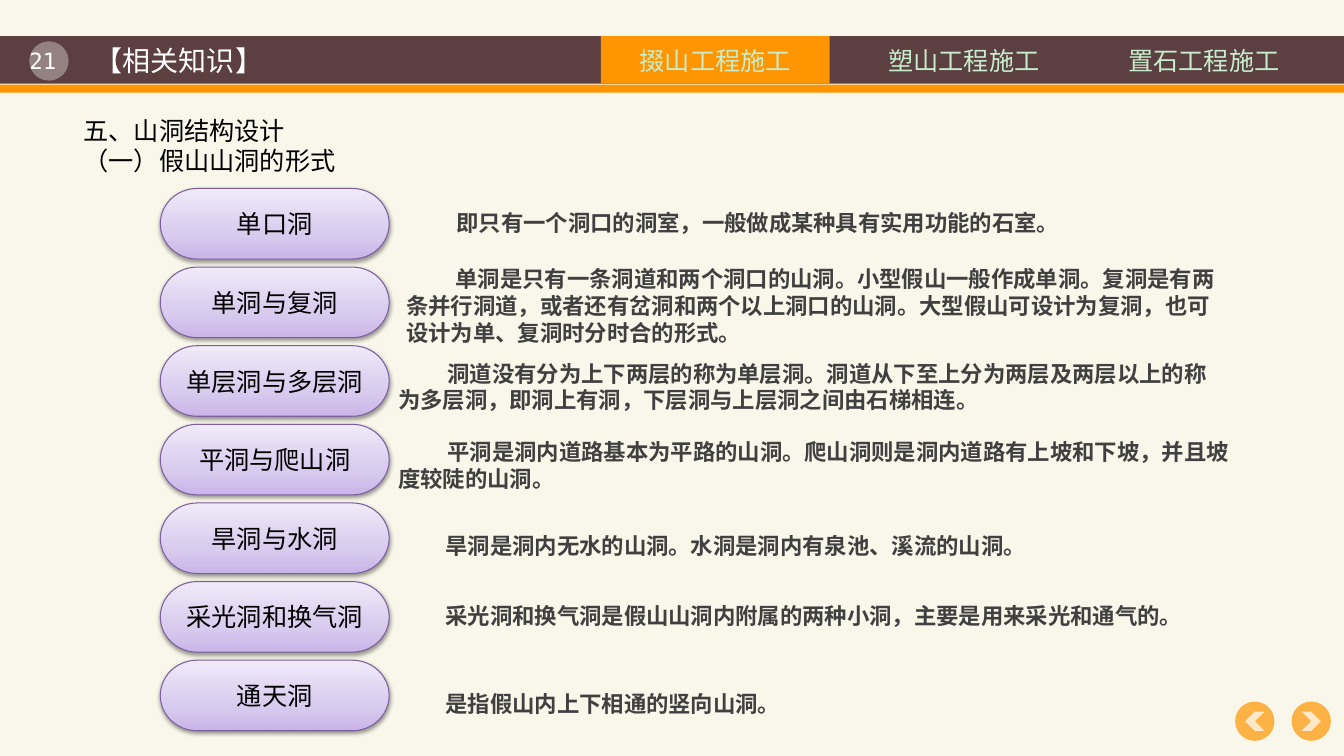
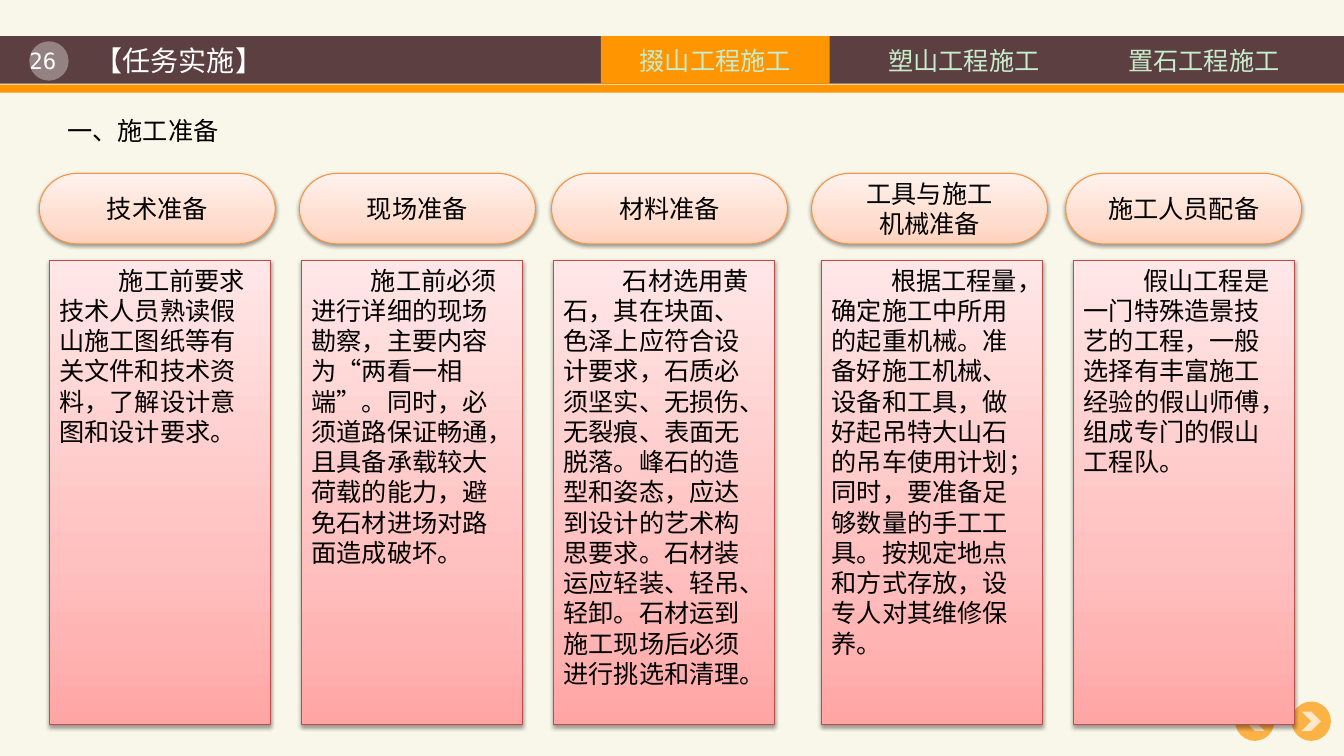
from lxml import etree
from pptx import Presentation
from pptx.dml.color import RGBColor
from pptx.enum.dml import MSO_THEME_COLOR
from pptx.enum.shapes import MSO_SHAPE
from pptx.enum.text import MSO_ANCHOR, MSO_AUTO_SIZE, PP_ALIGN
from pptx.oxml.ns import qn
from pptx.util import Inches, Pt

RECTANGLE, OVAL, CHEVRON = MSO_SHAPE.RECTANGLE, MSO_SHAPE.OVAL, MSO_SHAPE.CHEVRON
TERMINATOR = MSO_SHAPE.FLOWCHART_TERMINATOR
TOP, MIDDLE = MSO_ANCHOR.TOP, MSO_ANCHOR.MIDDLE
LEFT, CENTER = PP_ALIGN.LEFT, PP_ALIGN.CENTER
NO_AUTOFIT = MSO_AUTO_SIZE.NONE
ACCENT = MSO_THEME_COLOR.ACCENT_1

COLORS = {
    "paper": "F9F7EA", "band": "5C3F41", "orange": "FF9500", "white": "FFFFFF",
    "nav": "C7EDCC", "black": "000000", "gray": "404040",
    "purple_line": "7D60A0", "peach_line": "F69240", "red_line": "BF4C48",
}
GRADIENTS = {
    "purple": ("C9B5E8", "D8CBEE", "F0EAF9"),
    "peach": ("FFD2BD", "FFDED0", "FFF2ED"),
    "red": ("FFA6A5", "FFC0BF", "FFE7E7"),
}
GRADIENT_STOPS = (0, 35000, 100000)
SANS, SERIF, MONO = "Noto Sans CJK SC", "Times New Roman", "DejaVu Sans Mono"

NAV_TABS = [("掇山工程施工", 5.96, 2.27, True),
            ("塑山工程施工", 8.39, 2.34, False),
            ("置石工程施工", 10.73, 2.42, False)]

CAVES = [
    ("单口洞", (4.43, 2.03, 7.86, 0.37), 0,
     "即只有一个洞口的洞室，一般做成某种具有实用功能的石室。"),
    ("单洞与复洞", (3.93, 2.58, 8.28, 0.91), 0.49,
     "单洞是只有一条洞道和两个洞口的山洞。小型假山一般作成单洞。复洞是有两条并行洞道，"
     "或者还有岔洞和两个以上洞口的山洞。大型假山可设计为复洞，也可设计为单、复洞时分时合的形式。"),
    ("单层洞与多层洞", (3.85, 3.52, 8.44, 0.64), 0.49,
     "洞道没有分为上下两层的称为单层洞。洞道从下至上分为两层及两层以上的称为多层洞，"
     "即洞上有洞，下层洞与上层洞之间由石梯相连。"),
    ("平洞与爬山洞", (3.85, 4.3, 8.59, 0.64), 0.49,
     "平洞是洞内道路基本为平路的山洞。爬山洞则是洞内道路有上坡和下坡，并且坡度较陡的山洞。"),
    ("旱洞与水洞", (4.32, 5.23, 6.04, 0.37), 0,
     "旱洞是洞内无水的山洞。水洞是洞内有泉池、溪流的山洞。"),
    ("采光洞和换气洞", (3.83, 5.92, 8.46, 0.37), 0.49,
     "采光洞和换气洞是假山山洞内附属的两种小洞，主要是用来采光和通气的。"),
    ("通天洞", (4.32, 6.8, 6.67, 0.37), 0, "是指假山内上下相通的竖向山洞。"),
]

PREPARATIONS = [
    ("技术准备", 0.39, 0.49,
     "施工前要求技术人员熟读假山施工图纸等有关文件和技术资料，了解设计意图和设计要求。"),
    ("现场准备", 2.97, 2.99,
     "施工前必须进行详细的现场勘察，主要内容为“两看一相端”。同时，必须道路保证畅通，"
     "且具备承载较大荷载的能力，避免石材进场对路面造成破坏。"),
    ("材料准备", 5.47, 5.49,
     "石材选用黄石，其在块面、色泽上应符合设计要求，石质必须坚实、无损伤、无裂痕、表面无脱落。"
     "峰石的造型和姿态，应达到设计的艺术构思要求。石材装运应轻装、轻吊、轻卸。"
     "石材运到施工现场后必须进行挑选和清理。"),
    ("工具与施工\v机械准备", 8.05, 8.15,
     "根据工程量，确定施工中所用的起重机械。准备好施工机械、设备和工具，"
     "做好起吊特大山石的吊车使用计划；同时，要准备足够数量的手工工具。"
     "按规定地点和方式存放，设专人对其维修保养。"),
    ("施工人员配备", 10.57, 10.65,
     "假山工程是一门特殊造景技艺的工程，一般选择有丰富施工经验的假山师傅，组成专门的假山工程队。"),
]


def rgb(name):
    return RGBColor.from_string(COLORS[name])


def inches(box):
    return [Inches(value) for value in box]


def write(shape, lines, size, font, color, align=LEFT, anchor=TOP, bold=False, indent=0):
    frame = shape.text_frame
    frame.word_wrap = True
    frame.auto_size = NO_AUTOFIT
    frame.vertical_anchor = anchor
    frame.text = lines
    for paragraph in frame.paragraphs:
        paragraph.alignment = align
        if indent:
            properties = paragraph._p.get_or_add_pPr()
            properties.set("marL", "0")
            properties.set("indent", str(Inches(indent)))
        paragraph.font.size = Pt(size)
        paragraph.font.bold = bold
        paragraph.font.name = font
        paragraph.font.color.rgb = rgb(color)


def add_label(slide, box, lines, size, font, color, **layout):
    label = slide.shapes.add_textbox(*inches(box))
    write(label, lines, size, font, color, **layout)
    return label


def add_plain(slide, kind, box, color, opacity=100):
    plain = slide.shapes.add_shape(kind, *inches(box))
    plain.shadow.inherit = False
    plain.line.fill.background()
    plain.fill.solid()
    plain.fill.fore_color.rgb = rgb(color)
    if opacity < 100:
        solid = plain.fill._xPr.find(qn("a:solidFill"))
        etree.SubElement(solid[0], qn("a:alpha"), val=str(opacity * 1000))
    return plain


def add_soft_shadow(shape):
    shape.shadow.inherit = False
    effects = shape._element.spPr.find(qn("a:effectLst"))
    outer = etree.SubElement(effects, qn("a:outerShdw"), blurRad=str(Pt(3.1)),
                             dist=str(Pt(1.6)), dir="5400000", rotWithShape="0")
    black = etree.SubElement(outer, qn("a:srgbClr"), val=COLORS["black"])
    etree.SubElement(black, qn("a:alpha"), val="38000")


def add_panel(slide, kind, box, tone, lines, **layout):
    panel = slide.shapes.add_shape(kind, *inches(box))
    panel.fill.gradient()
    panel.fill.gradient_angle = 90
    stops = panel._element.spPr.find(".//" + qn("a:gsLst"))
    for stop in list(stops):
        stops.remove(stop)
    for position, color in zip(GRADIENT_STOPS, GRADIENTS[tone]):
        stop = etree.SubElement(stops, qn("a:gs"), pos=str(position))
        etree.SubElement(stop, qn("a:srgbClr"), val=color)
    panel.line.color.rgb = rgb(tone + "_line")
    panel.line.width = Pt(0.75)
    add_soft_shadow(panel)
    write(panel, lines, 18, SERIF, "black", **layout)


def add_arrow_button(slide, left, rotation):
    disc = add_plain(slide, OVAL, (left, 6.96, 0.39, 0.39), "orange", 70)
    chevron = add_plain(slide, CHEVRON, (left + 0.1, 7.06, 0.19, 0.19), "white", 70)
    chevron.rotation = rotation
    return slide.shapes.add_group_shape([disc, chevron])


def build_frame(slide, layout):
    parts = [
        add_arrow_button(slide, 12.25, 180),
        add_arrow_button(slide, 12.81, 0),
        add_plain(slide, RECTANGLE, (0, 0.36, 13.33, 0.47), "band"),
        add_plain(slide, RECTANGLE, (0, 0.84, 13.33, 0.08), "orange"),
        add_plain(slide, OVAL, (0.29, 0.41, 0.39, 0.39), "white", 35),
    ]
    for name, left, width, active in NAV_TABS:
        box = (left, 0.36, width, 0.47)
        if active:
            tab = add_plain(slide, RECTANGLE, box, "orange")
            write(tab, name, 18, SANS, "nav", align=CENTER, anchor=MIDDLE)
        else:
            tab = add_label(slide, box, name, 18, SANS, "nav", align=CENTER, anchor=MIDDLE)
        parts.append(tab)
    for part in parts:
        layout.shapes.element.append(part._element)


def add_page(deck, layout, number, title, heading, heading_box):
    slide = deck.slides.add_slide(layout)
    heading_title = slide.shapes.title
    heading_title.left, heading_title.top, heading_title.width, heading_title.height = inches(
        (0.84, 0.38, 5.1, 0.44))
    write(heading_title, title, 20, SANS, "white", anchor=MIDDLE)
    add_label(slide, (0.07, 0.42, 0.71, 0.37), number, 16, MONO, "white", align=CENTER)
    add_label(slide, heading_box, heading, 18, SERIF, "black")
    return slide


def add_caves(slide):
    for row, (name, box, indent, description) in enumerate(CAVES):
        add_panel(slide, TERMINATOR, (1.59, 1.87 + 0.78 * row, 2.27, 0.7), "purple", name,
                  align=CENTER, anchor=MIDDLE)
        add_label(slide, box, description, 16, SANS, "gray", bold=True, indent=indent)


def add_preparations(slide):
    for name, pill_left, card_left, description in PREPARATIONS:
        add_panel(slide, TERMINATOR, (pill_left, 1.72, 2.34, 0.7), "peach", name,
                  align=CENTER, anchor=MIDDLE)
        add_panel(slide, RECTANGLE, (card_left, 2.58, 2.19, 4.61), "red", description,
                  indent=0.59)


def main():
    deck = Presentation()
    deck.slide_width, deck.slide_height = Inches(13.33), Inches(7.5)
    background = deck.slide_master.background.fill
    background.solid()
    background.fore_color.rgb = rgb("paper")
    layout = deck.slide_layouts.get_by_name("Title Only")

    caves = add_page(deck, layout, "21", "【相关知识】",
                     "五、山洞结构设计\n（一）假山山洞的形式", (0.73, 1.09, 6.67, 0.71))
    build_frame(caves, layout)
    add_caves(caves)

    preparations = add_page(deck, layout, "26", "【任务实施】",
                            "一、施工准备", (0.57, 1.09, 6.67, 0.4))
    add_preparations(preparations)
    deck.save("out.pptx")


if __name__ == "__main__":
    main()
